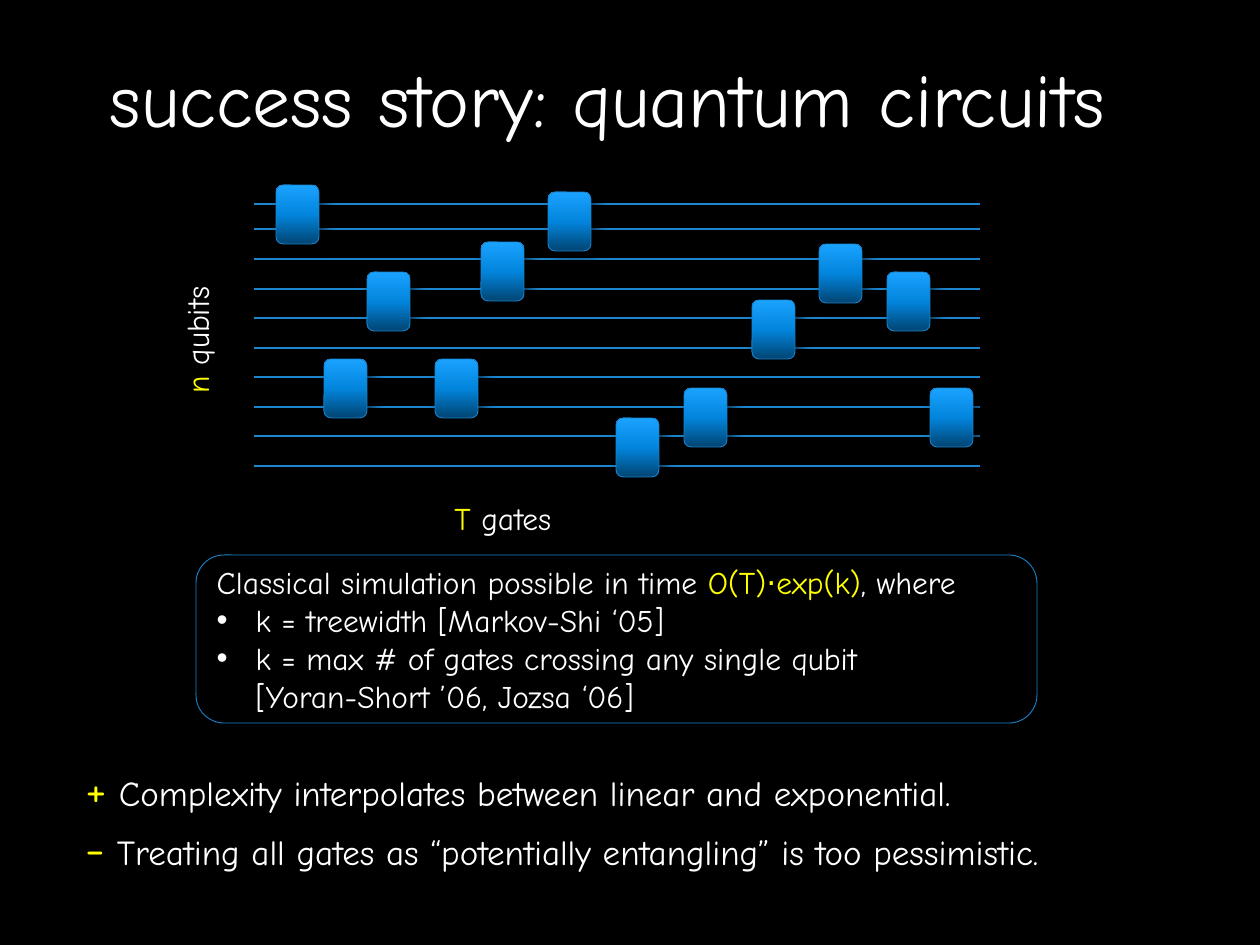
from lxml.etree import SubElement
from pptx import Presentation
from pptx.dml.color import RGBColor
from pptx.enum.shapes import MSO_CONNECTOR as Connector, MSO_SHAPE as Shape
from pptx.enum.text import MSO_ANCHOR as Anchor, MSO_AUTO_SIZE as AutoSize, PP_ALIGN as Align
from pptx.oxml import parse_xml
from pptx.oxml.ns import nsdecls, qn
from pptx.util import Emu, Pt

FONT = "Comic Neue"
WHITE, YELLOW, BLACK = "FFFFFF", "FFFF00", "000000"
WIRE, OUTLINE = "1D86CD", "1884CD"
GATE_STOPS = [(0, "014573"), (50, "0285DD"), (100, "1AA3FF")]
GATE_WIDTH, GATE_HEIGHT = 43, 59
WIRE_LEFT, WIRE_RIGHT = 254, 980
WIRE_TOPS = [204, 229] + [round(259 + row * 207 / 7) for row in range(8)]
GATES = [(276, 185), (367, 272), (435, 359), (481, 242), (548, 192), (616, 418),
         (684, 388), (752, 300), (819, 244), (887, 272), (930, 388), (324, 359)]


def px(*lengths):
    return [Emu(round(length * 914400 / 126)) for length in lengths]


def color(value):
    return RGBColor.from_string(value)


def write(paragraph, text, size=18, fill=WHITE):
    for index, line in enumerate(text.split("\n")):
        if index:
            paragraph.add_line_break()
        if line:
            run = paragraph.add_run()
            run.text = line
            run.font.name = FONT
            run.font.size = Pt(size)
            run.font.color.rgb = color(fill)


def add_bullet(paragraph, indent):
    properties = paragraph._p.get_or_add_pPr()
    distance = px(indent)[0]
    properties.set("marL", str(distance))
    properties.set("indent", str(-distance))
    SubElement(properties, qn("a:buFont")).set("typeface", "Arial")
    SubElement(properties, qn("a:buChar")).set("char", "•")


def add_title(slide, text):
    title = slide.shapes.title
    title.left, title.top, title.width, title.height = px(36, 36, 1143, 122)
    title.text_frame.vertical_anchor = Anchor.MIDDLE
    paragraph = title.text_frame.paragraphs[0]
    paragraph.alignment = Align.CENTER
    write(paragraph, text, size=43.2)


def add_text(shapes, box, wrap=False, rotation=0):
    shape = shapes.add_textbox(*px(*box))
    shape.rotation = rotation
    shape.text_frame.word_wrap = wrap
    shape.text_frame.auto_size = AutoSize.SHAPE_TO_FIT_TEXT
    return shape.text_frame.paragraphs[0]


def add_wire(shapes, top):
    wire = shapes.add_connector(Connector.STRAIGHT, *px(WIRE_LEFT, top, WIRE_RIGHT, top))
    wire.line.color.rgb = color(WIRE)
    wire.line.width = Pt(1.5)
    SubElement(wire._element.spPr, qn("a:effectLst"))


def add_rounded(shapes, box):
    shape = shapes.add_shape(Shape.ROUNDED_RECTANGLE, *px(*box))
    shape.fill.background()
    shape.line.color.rgb = color(OUTLINE)
    shape.line.width = Pt(0.5)
    shape.shadow.inherit = False
    return shape


def add_gate(shapes, left, top):
    gate = add_rounded(shapes, (left, top, GATE_WIDTH, GATE_HEIGHT))
    properties = gate._element.spPr
    stops = "".join(f'<a:gs pos="{place * 1000}"><a:srgbClr val="{value}"/></a:gs>'
                    for place, value in GATE_STOPS)
    gradient = parse_xml(f'<a:gradFill {nsdecls("a")} rotWithShape="1"><a:gsLst>{stops}</a:gsLst>'
                         '<a:lin ang="16200000" scaled="0"/></a:gradFill>')
    properties.replace(properties.find(qn("a:noFill")), gradient)
    shadow = parse_xml(f'<a:outerShdw {nsdecls("a")} blurRad="{Pt(7)}" dist="{Pt(4)}" '
                       f'dir="{35 * 60000}" rotWithShape="0"><a:srgbClr val="{BLACK}">'
                       '<a:alpha val="55000"/></a:srgbClr></a:outerShdw>')
    properties.find(qn("a:effectLst")).append(shadow)


def add_circuit(slide):
    shapes = slide.shapes.add_group_shape().shapes
    for top in WIRE_TOPS:
        add_wire(shapes, top)
    for left, top in GATES:
        add_gate(shapes, left, top)
    gates_label = add_text(shapes, (442, 493, 131, 50))
    write(gates_label, "T", fill=YELLOW)
    write(gates_label, " gates")
    qubits_label = add_text(shapes, (127, 311, 139, 50), rotation=270)
    write(qubits_label, "n ", fill=YELLOW)
    write(qubits_label, "qubits")


def add_result(slide):
    frame = add_rounded(slide.shapes, (196, 555, 841, 168)).text_frame
    frame.word_wrap = True
    frame.vertical_anchor = Anchor.MIDDLE
    claim = frame.paragraphs[0]
    write(claim, "Classical simulation possible in time ")
    write(claim, "O(T)⋅exp(k)", fill=YELLOW)
    write(claim, ", where")
    for text in ("k = treewidth [Markov-Shi ‘05]",
                 "k = max # of gates crossing any single qubit\n[Yoran-Short ’06, Jozsa ‘06]"):
        paragraph = frame.add_paragraph()
        add_bullet(paragraph, 39)
        write(paragraph, text)
    for paragraph in frame.paragraphs:
        paragraph.alignment = Align.LEFT


def add_verdict(slide):
    paragraph = add_text(slide.shapes, (73, 751, 1108, 131), wrap=True)
    for sign, text in (("+", " Complexity interpolates between linear and exponential.\n"),
                       ("-", " Treating all gates as “potentially entangling” is too pessimistic.")):
        write(paragraph, sign, size=28, fill=YELLOW)
        write(paragraph, text, size=20)


def main():
    presentation = Presentation()
    presentation.slide_width, presentation.slide_height = px(1260, 945)
    slide = presentation.slides.add_slide(presentation.slide_layouts[5])
    slide.background.fill.solid()
    slide.background.fill.fore_color.rgb = color(BLACK)
    add_title(slide, "success story: quantum circuits")
    add_verdict(slide)
    add_circuit(slide)
    add_result(slide)
    presentation.save("out.pptx")


if __name__ == "__main__":
    main()
